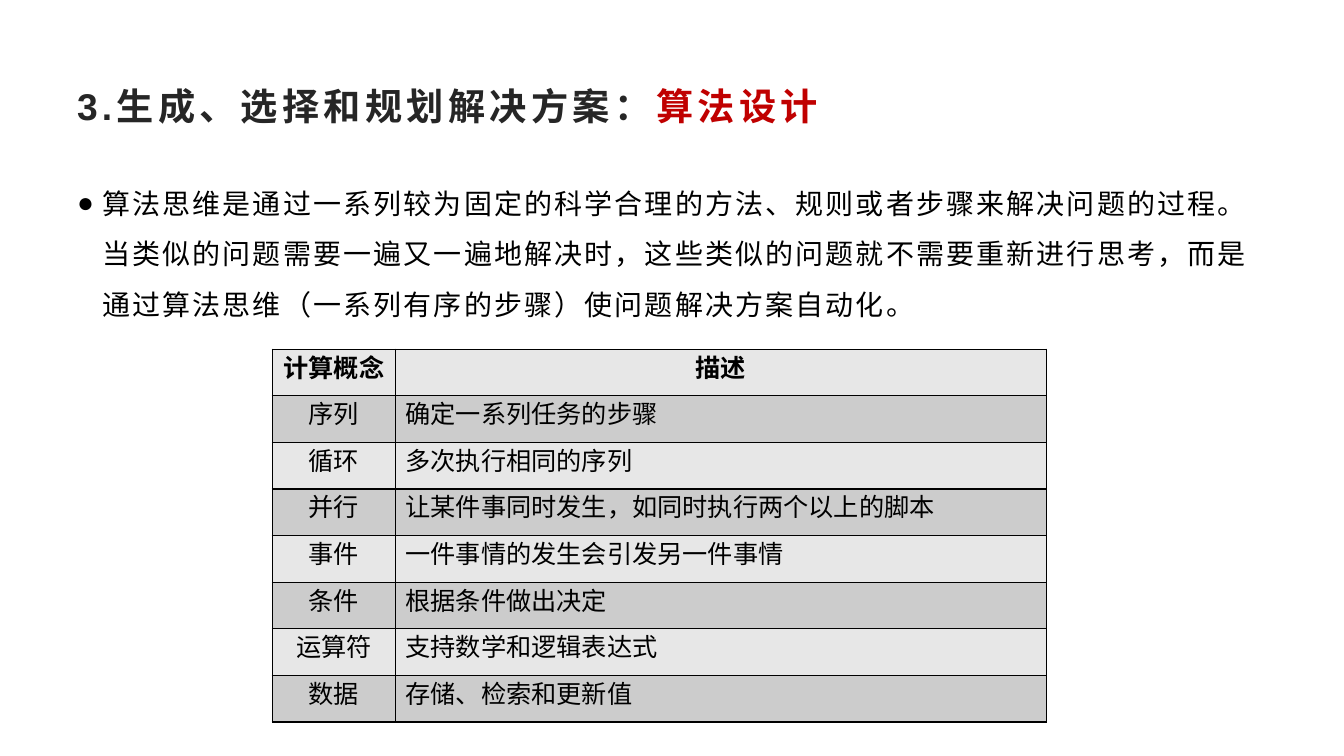
"""Build a slide on algorithm design with a table of computing concepts."""
from lxml import etree
from pptx import Presentation
from pptx.dml.color import RGBColor
from pptx.enum.text import MSO_ANCHOR, PP_ALIGN
from pptx.oxml.ns import qn
from pptx.util import Pt

CENTER, LEFT = PP_ALIGN.CENTER, PP_ALIGN.LEFT
MIDDLE, TOP = MSO_ANCHOR.MIDDLE, MSO_ANCHOR.TOP
FONT = "Arial"
BLACK = "000000"
BANDS = ("E7E7E7", "CCCCCC")

TITLE = [("3.生成、选择和规划解决方案：", "262626"), ("算法设计", "C00000")]
BODY = (
    "算法思维是通过一系列较为固定的科学合理的方法、规则或者步骤来解决问题的过程。"
    "当类似的问题需要一遍又一遍地解决时，这些类似的问题就不需要重新进行思考，"
    "而是通过算法思维（一系列有序的步骤）使问题解决方案自动化。"
)
CONCEPTS = [
    ("计算概念", "描述"),
    ("序列", "确定一系列任务的步骤"),
    ("循环", "多次执行相同的序列"),
    ("并行", "让某件事同时发生，如同时执行两个以上的脚本"),
    ("事件", "一件事情的发生会引发另一件事情"),
    ("条件", "根据条件做出决定"),
    ("运算符", "支持数学和逻辑表达式"),
    ("数据", "存储、检索和更新值"),
]
COL_WIDTHS = (88, 465)
ROW_HEIGHT = 33.3


def rgb(color):
    return RGBColor.from_string(color)


def add_run(p, text, size, color=BLACK, bold=False, spacing=0):
    r = p.add_run()
    r.text = text
    r.font.name, r.font.size, r.font.bold = FONT, Pt(size), bold
    r.font.color.rgb = rgb(color)
    rPr = r.font._element
    if spacing:
        rPr.set("spc", str(int(spacing * 100)))
    etree.SubElement(rPr, qn("a:ea")).set("typeface", FONT)


def add_text_box(s, left, top, width, height, anchor):
    tf = s.shapes.add_textbox(Pt(left), Pt(top), Pt(width), Pt(height)).text_frame
    tf.word_wrap = True
    tf.vertical_anchor = anchor
    return tf.paragraphs[0]


def add_bullet(p, char, indent):
    pPr = p._p.get_or_add_pPr()
    pPr.set("marL", str(Pt(indent)))
    pPr.set("indent", str(-Pt(indent)))
    etree.SubElement(pPr, qn("a:buFont")).set("typeface", FONT)
    etree.SubElement(pPr, qn("a:buChar")).set("char", char)


def set_borders(cell, color, width):
    tcPr = cell._tc.get_or_add_tcPr()
    for i, side in enumerate(("a:lnL", "a:lnR", "a:lnT", "a:lnB")):
        ln = etree.Element(qn(side), w=str(Pt(width)))
        fill = etree.SubElement(ln, qn("a:solidFill"))
        etree.SubElement(fill, qn("a:srgbClr")).set("val", color)
        tcPr.insert(i, ln)


def add_concept_table(s, left, top):
    table = s.shapes.add_table(
        len(CONCEPTS), len(COL_WIDTHS), Pt(left), Pt(top),
        Pt(sum(COL_WIDTHS)), Pt(ROW_HEIGHT * len(CONCEPTS))).table
    for column, width in zip(table.columns, COL_WIDTHS):
        column.width = Pt(width)
    for i, texts in enumerate(CONCEPTS):
        table.rows[i].height = Pt(ROW_HEIGHT)
        for j, text in enumerate(texts):
            cell = table.cell(i, j)
            cell.fill.solid()
            cell.fill.fore_color.rgb = rgb(BANDS[i % 2])
            set_borders(cell, BLACK, 1)
            p = cell.text_frame.paragraphs[0]
            p.alignment = CENTER if i == 0 or j == 0 else LEFT
            add_run(p, text, 18, bold=i == 0)


def main():
    prs = Presentation()
    prs.slide_width, prs.slide_height = Pt(960), Pt(540)
    s = prs.slides.add_slide(prs.slide_layouts[6])

    p = add_text_box(s, 48, 48, 864, 55.5, MIDDLE)
    for text, color in TITLE:
        add_run(p, text, 26.6, color, bold=True, spacing=3)

    p = add_text_box(s, 48, 117.5, 864, 374.5, TOP)
    p.line_spacing, p.space_after = 1.5, Pt(10)
    add_bullet(p, "●", 18)
    add_run(p, BODY, 20, spacing=1.5)

    add_concept_table(s, 194.5, 249.5)
    prs.save("out.pptx")


if __name__ == "__main__":
    main()
